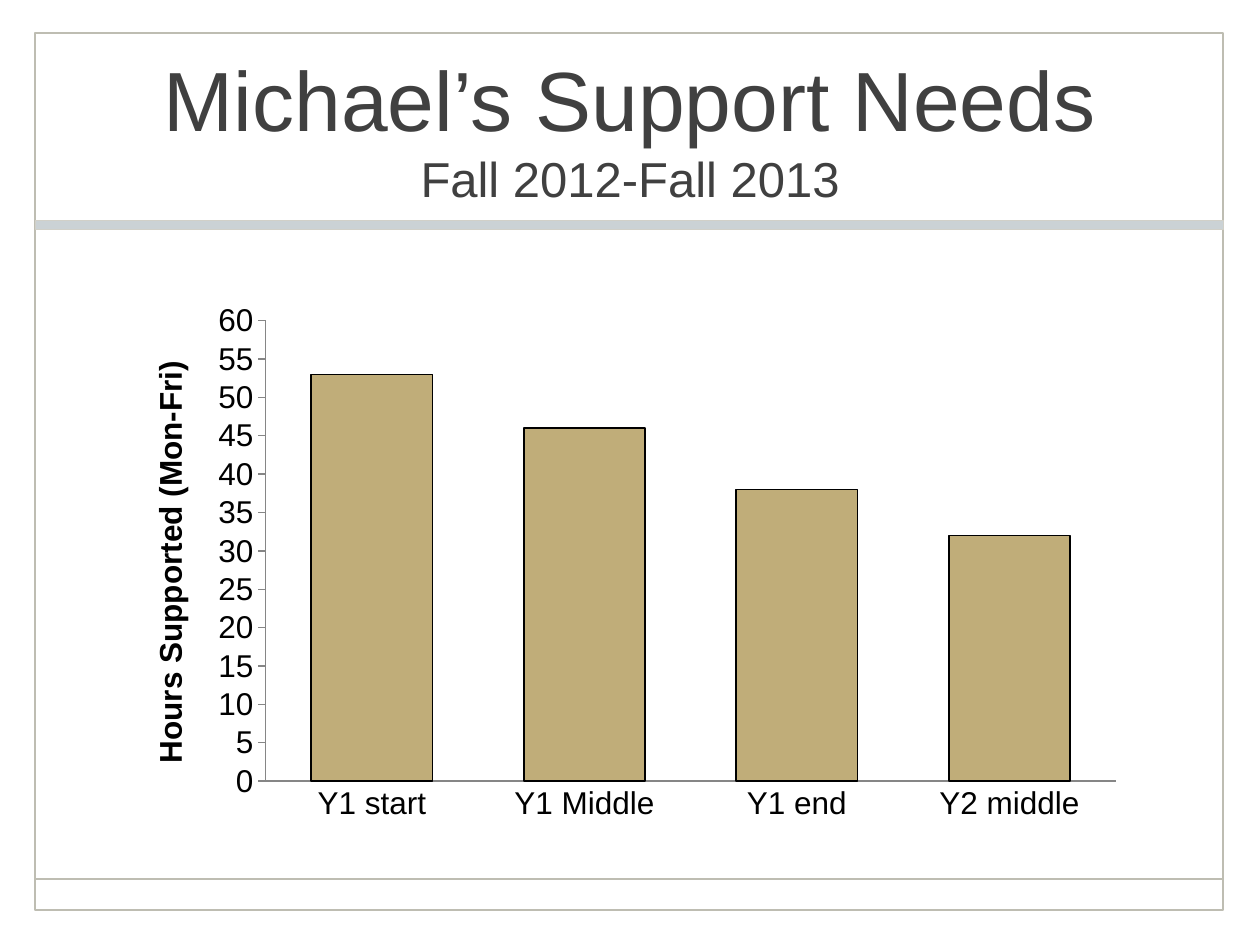
from lxml import etree
from pptx import Presentation
from pptx import util as u
from pptx.chart.data import CategoryChartData
from pptx.dml.color import RGBColor
from pptx.enum import chart as ch, shapes, text
from pptx.oxml import parse_xml
from pptx.oxml.ns import nsdecls, qn

COLORS = {"frame": "BEBDB2", "band": "CBD2D5", "band_edge": "D1D0C8",
          "title": "404040", "bar": "C0AD79", "ink": "000000", "axis": "868686"}
FONT = "Arial"


def rgb(name):
    return RGBColor.from_string(COLORS[name])


def style_font(font, color, **values):
    for key, value in {"name": FONT, **values}.items():
        setattr(font, key, value)
    font.color.rgb = rgb(color)


def style_line(line, color, width):
    line.color.rgb = rgb(color)
    line.width = u.Pt(width)


def add_rect(s, x, y, w, h, fill, edge, width):
    sp = s.shapes.add_shape(shapes.MSO_SHAPE.RECTANGLE, u.Cm(x), u.Cm(y), u.Cm(w), u.Cm(h))
    sp.shadow.inherit = False
    if fill:
        sp.fill.solid()
        sp.fill.fore_color.rgb = rgb(fill)
    else:
        sp.fill.background()
    style_line(sp.line, edge, width)


def add_frame(s, x, y, w, h):
    """Outline with a band under the title and a rule above the footer."""
    add_rect(s, x, y, w, h, None, "frame", 1)
    rule_y = u.Cm(y + h - 0.62)
    rule = s.shapes.add_connector(shapes.MSO_CONNECTOR.STRAIGHT, u.Cm(x), rule_y, u.Cm(x + w), rule_y)
    style_line(rule.line, "frame", 1)
    etree.SubElement(rule._element.spPr, qn("a:effectLst"))
    add_rect(s, x, y + 3.78, w, 0.18, "band", "band_edge", 0.25)


def add_title(s, x, y, w, h):
    tf = s.shapes.add_textbox(u.Cm(x), u.Cm(y), u.Cm(w), u.Cm(h)).text_frame
    tf.word_wrap = True
    tf.vertical_anchor = text.MSO_ANCHOR.MIDDLE
    p = tf.paragraphs[0]
    p.alignment = text.PP_ALIGN.CENTER
    for i, (words, size) in enumerate([("Michael’s Support Needs", 48), ("Fall 2012-Fall 2013", 28)]):
        if i:
            p.add_line_break()
        r = p.add_run()
        r.text = words
        style_font(r.font, "title", size=u.Pt(size))


def set_plot_area(chart, **fractions):
    """Fix the inner plot area as fractions of the chart."""
    parts = "".join(f'<c:{k} val="{v}"/>' for k, v in fractions.items())
    layout = parse_xml(
        f'<c:layout {nsdecls("c")}><c:manualLayout><c:layoutTarget val="inner"/>'
        f'<c:xMode val="edge"/><c:yMode val="edge"/>{parts}</c:manualLayout></c:layout>')
    area = chart._chartSpace.chart.plotArea
    for old in area.findall(qn("c:layout")):
        area.remove(old)
    area.insert(0, layout)


def add_hours_chart(s, x, y, w, h):
    data = CategoryChartData()
    data.categories = ["Y1 start", "Y1 Middle", "Y1 end", "Y2 middle"]
    data.add_series("Series 1", [53, 46, 38, 32])
    chart = s.shapes.add_chart(ch.XL_CHART_TYPE.COLUMN_STACKED, u.Cm(x), u.Cm(y),
                               u.Cm(w), u.Cm(h), data).chart
    chart.has_legend = chart.has_title = False
    style_font(chart.font, "ink", size=u.Pt(18))
    set_plot_area(chart, x=0.14, y=0.05, w=0.84, h=0.85)

    plot = chart.plots[0]
    for key, value in {"gap_width": 75, "overlap": 100, "vary_by_categories": False}.items():
        setattr(plot, key, value)
    bars = plot.series[0].format
    bars.fill.solid()
    bars.fill.fore_color.rgb = rgb("bar")
    style_line(bars.line, "ink", 1)

    hours = chart.value_axis
    formats = {"minimum_scale": 0, "maximum_scale": 60, "major_unit": 5}
    for key, value in formats.items():
        setattr(hours, key, value)
    for axis, tick in ((chart.category_axis, ch.XL_TICK_MARK.NONE), (hours, ch.XL_TICK_MARK.OUTSIDE)):
        axis.has_major_gridlines = False
        axis.major_tick_mark = tick
        style_line(axis.format.line, "axis", 0.75)
    p = hours.axis_title.text_frame.paragraphs[0]
    r = p.add_run()
    r.text = "Hours Supported (Mon-Fri)"
    style_font(r.font, "ink", size=u.Pt(18), bold=True)


def main():
    prs = Presentation()
    prs.slide_width, prs.slide_height = u.Cm(25.4), u.Cm(19.05)
    s = prs.slides.add_slide(prs.slide_layouts[6])
    add_frame(s, 0.71, 0.66, 23.95, 17.68)
    add_title(s, 2.5, 0.7, 20.4, 3.73)
    add_hours_chart(s, 2.5, 5.92, 20.4, 10.92)
    prs.save("out.pptx")


if __name__ == "__main__":
    main()
